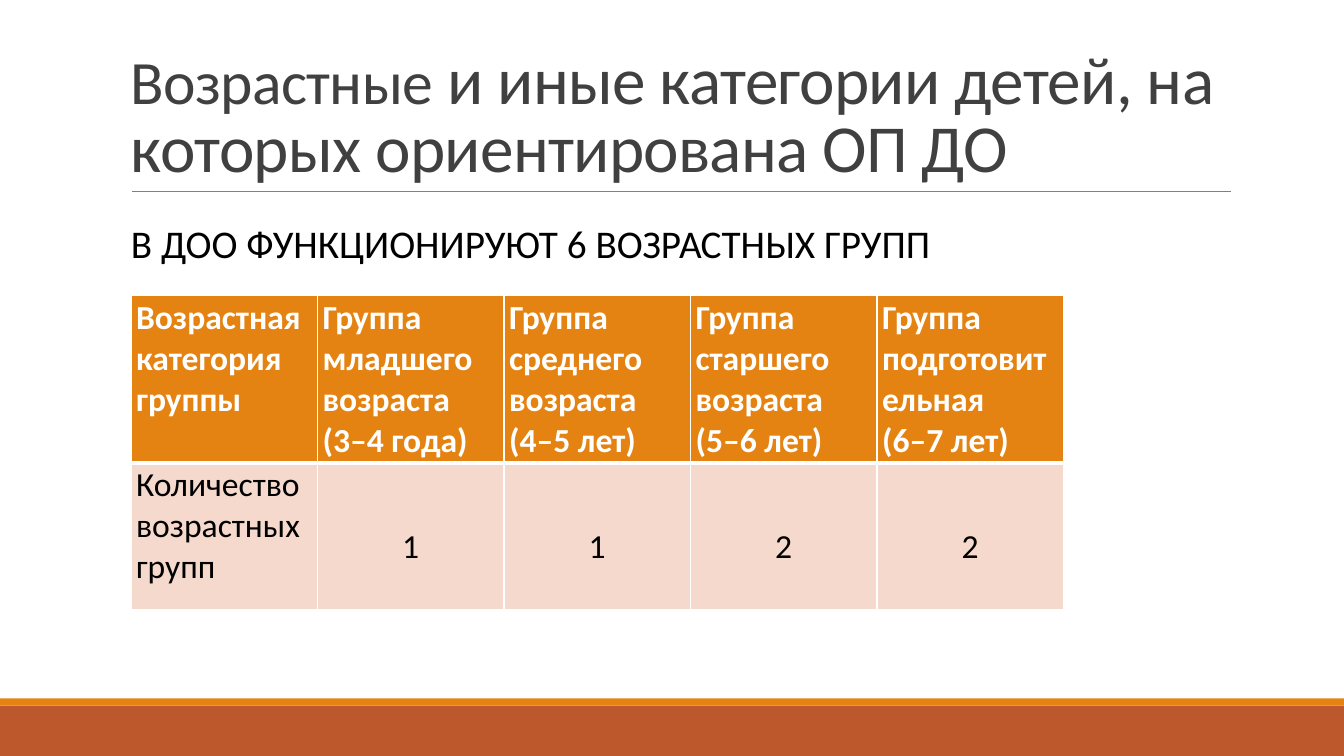
from lxml.etree import SubElement
from pptx import Presentation
from pptx.dml.color import RGBColor
from pptx.enum.shapes import MSO_CONNECTOR, MSO_SHAPE
from pptx.enum.text import MSO_ANCHOR, PP_ALIGN
from pptx.oxml.ns import qn
from pptx.util import Cm, Pt

ORANGE = RGBColor(0xE4, 0x83, 0x12)
RUST = RGBColor(0xBD, 0x58, 0x2C)
PINK = RGBColor(0xF5, 0xD9, 0xCC)
GRAY = RGBColor(0x80, 0x80, 0x80)
DARK = RGBColor(0x40, 0x40, 0x40)
WHITE = RGBColor(0xFF, 0xFF, 0xFF)
BLACK = RGBColor(0, 0, 0)

HEADERS = [
    ["Возрастная категория группы"],
    ["Группа младшего возраста", "(3–4 года)"],
    ["Группа среднего возраста (4–5 лет)"],
    ["Группа старшего возраста (5–6 лет)"],
    ["Группа подготовительная", "(6–7 лет)"],
]
COUNTS = [["Количество возрастных групп"], ["1"], ["1"], ["2"], ["2"]]


class SlideBuilder:
    """Adds styled elements to one slide."""

    font_name = "Calibri"
    margins = {
        "margin_left": Cm(0.13),
        "margin_right": Cm(0.13),
        "margin_top": Cm(0.05),
        "margin_bottom": Cm(0.05),
    }

    def __init__(self, page):
        self.page = page

    def apply(self, target, formats):
        for name, value in formats.items():
            setattr(target, name, value)

    def bar(self, top, height, color):
        bar = self.page.shapes.add_shape(
            MSO_SHAPE.RECTANGLE, 0, Cm(top), Cm(33.87), Cm(height))
        bar.shadow.inherit = False
        bar.fill.solid()
        bar.fill.fore_color.rgb = color
        bar.line.fill.background()

    def rule(self, left, right, top):
        rule = self.page.shapes.add_connector(
            MSO_CONNECTOR.STRAIGHT, Cm(left), Cm(top), Cm(right), Cm(top))
        rule.line.color.rgb = GRAY
        rule.line.width = Pt(0.5)
        SubElement(rule._element.spPr, qn("a:effectLst"))

    def add_span(self, para, text, size, color, bold=False, spacing=None):
        span = para.add_run()
        span.text = text
        self.apply(span.font, {
            "name": self.font_name, "size": Pt(size), "bold": bold})
        span.font.color.rgb = color
        if spacing is not None:
            span._r.get_or_add_rPr().set("spc", str(round(spacing * 100)))

    def text(self, place, anchor, spans, formats, color, spacing=None):
        box = self.page.shapes.add_textbox(*map(Cm, place))
        self.apply(box.text_frame, {
            "word_wrap": True, "vertical_anchor": anchor})
        para = box.text_frame.paragraphs[0]
        self.apply(para, formats)
        for text, size in spans:
            self.add_span(para, text, size, color, spacing=spacing)

    def border(self, cell, widths):
        properties = cell._tc.get_or_add_tcPr()
        for index, (side, width) in enumerate(widths.items()):
            line = SubElement(properties, qn(f"a:ln{side}"), w=str(Pt(width)))
            fill = SubElement(line, qn("a:solidFill"))
            SubElement(fill, qn("a:srgbClr"), val=str(WHITE))
            properties.remove(line)
            properties.insert(index, line)

    def cell(self, cell, lines, fill, color, bold, formats, widths):
        self.apply(cell, self.margins)
        cell.fill.solid()
        cell.fill.fore_color.rgb = fill
        self.border(cell, widths)
        for index, text in enumerate(lines):
            frame = cell.text_frame
            para = frame.add_paragraph() if index else frame.paragraphs[0]
            self.apply(para, formats)
            self.add_span(para, text, 24, color, bold)

    def table(self, left, top, column_width, row_heights):
        table = self.page.shapes.add_table(
            2, len(HEADERS), Cm(left), Cm(top),
            Cm(column_width * len(HEADERS)), Cm(sum(row_heights))).table
        for column in table.columns:
            column.width = Cm(column_width)
        for row, height in zip(table.rows, row_heights):
            row.height = Cm(height)
        centered = {"alignment": PP_ALIGN.CENTER, "line_spacing": 2.5}
        for index, (header, count) in enumerate(zip(HEADERS, COUNTS)):
            self.cell(table.cell(0, index), header, ORANGE, WHITE, True, {},
                      {"L": 1, "R": 1, "T": 1, "B": 3})
            self.cell(table.cell(1, index), count, PINK, BLACK, False,
                      centered if index else {},
                      {"L": 1, "R": 1, "T": 3, "B": 1})


def main():
    deck = Presentation()
    deck.slide_width, deck.slide_height = Cm(33.87), Cm(19.05)
    builder = SlideBuilder(deck.slides.add_slide(deck.slide_layouts[6]))
    builder.bar(17.78, 1.27, RUST)
    builder.bar(17.6, 0.18, ORANGE)
    builder.rule(3.33, 31.01, 4.82)
    builder.text(
        (3.05, 0.79, 27.94, 4.04), MSO_ANCHOR.BOTTOM,
        [("Возрастные", 44),
         (" и иные категории детей, на которых ориентирована ОП ДО", 48)],
        {"line_spacing": 0.85}, DARK, spacing=-0.5)
    builder.text(
        (3.05, 5.46, 23.24, 1.47), MSO_ANCHOR.MIDDLE,
        [("В ДОО ФУНКЦИОНИРУЮТ 6 ВОЗРАСТНЫХ ГРУПП", 28)],
        {"line_spacing": 0.9, "space_before": Pt(12), "space_after": Pt(2)},
        BLACK)
    builder.table(3.3, 7.44, 4.7, (4.22, 3.71))
    deck.save("out.pptx")


if __name__ == "__main__":
    main()
